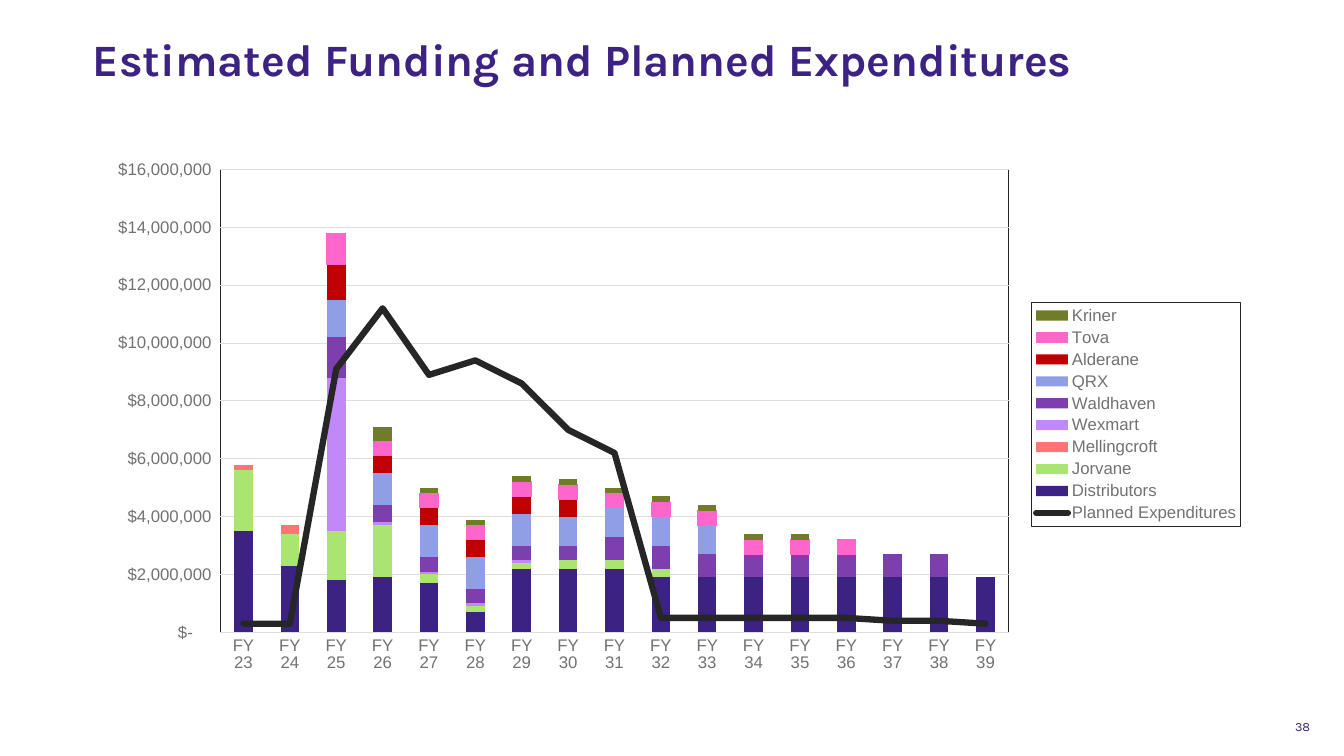
import pptx
import pptx.chart.data
import pptx.dml.color
import pptx.enum.chart
import pptx.enum.text
import pptx.oxml
import pptx.oxml.ns
import pptx.util
from pptx.util import Inches

PURPLE = pptx.dml.color.RGBColor(0x3C, 0x22, 0x83)
INK = pptx.dml.color.RGBColor(0x26, 0x26, 0x26)
LABEL_GRAY = pptx.dml.color.RGBColor(0x72, 0x72, 0x72)
GRID_GRAY = pptx.dml.color.RGBColor(0xDE, 0xDE, 0xDE)
PINK = pptx.dml.color.RGBColor(0xFF, 0x66, 0xCC)
NAMESPACES = pptx.oxml.ns.nsdecls("c", "a")
YEARS = range(23, 40)

# Payer, colour, first fiscal year, funding in units of $100,000
FUNDING = [
    ("Distributors", PURPLE, 23,
     [35, 23, 18, 19, 17, 7, 22, 22, 22, 19, 19, 19, 19, 19, 19, 19, 19]),
    ("Jorvane", pptx.dml.color.RGBColor(0xAA, 0xE5, 0x71), 23,
     [21, 11, 17, 18, 3, 2, 2, 3, 3, 3]),
    ("Mellingcroft", pptx.dml.color.RGBColor(0xFF, 0x74, 0x74), 23, [2, 3]),
    ("Wexmart", pptx.dml.color.RGBColor(0xC1, 0x89, 0xF7), 25, [53, 1, 1, 1, 1]),
    ("Waldhaven", pptx.dml.color.RGBColor(0x7D, 0x3F, 0xAE), 25,
     [14, 6, 5, 5, 5, 5, 8, 8, 8, 8, 8, 8, 8, 8]),
    ("QRX", pptx.dml.color.RGBColor(0x90, 0x9E, 0xE6), 25,
     [13, 11, 11, 11, 11, 10, 10, 10, 10]),
    ("Alderane", pptx.dml.color.RGBColor(0xC0, 0x00, 0x00), 25, [12, 6, 6, 6, 6, 6]),
    ("Tova", PINK, 25, [11] + [5] * 11),
    ("Kriner", pptx.dml.color.RGBColor(0x71, 0x7C, 0x27), 26, [5] + [2] * 9),
    ("Planned Expenditures", INK, 23,
     [3, 3, 91, 112, 89, 94, 86, 70, 62, 5, 5, 5, 5, 5, 4, 4, 3]),
]


def style_font(font, name, size, color):
    font.name = name
    font.size = pptx.util.Pt(size)
    font.color.rgb = color


def set_layout(element, position, target, x, y, width, height):
    """Place a chart part by fractions of the chart area."""
    for old in element.findall(pptx.oxml.ns.qn("c:layout")):
        element.remove(old)
    element.insert(position, pptx.oxml.parse_xml(
        f'<c:layout {NAMESPACES}><c:manualLayout>{target}'
        '<c:xMode val="edge"/><c:yMode val="edge"/>'
        f'<c:x val="{x}"/><c:y val="{y}"/><c:w val="{width}"/><c:h val="{height}"/>'
        '</c:manualLayout></c:layout>'))


deck = pptx.Presentation()
deck.slide_width, deck.slide_height = Inches(13.33), Inches(7.5)
slide = deck.slides.add_slide(deck.slide_layouts[5])

# Title
title = slide.shapes.title
title.left, title.top = Inches(0.92), Inches(0.37)
title.width, title.height = Inches(12.13), Inches(0.87)
frame = title.text_frame
frame.margin_left = frame.margin_right = frame.margin_top = 0
frame.vertical_anchor = pptx.enum.text.MSO_ANCHOR.TOP
para = frame.paragraphs[0]
para.alignment = pptx.enum.text.PP_ALIGN.LEFT
para.line_spacing = 0.9
span = para.add_run()
span.text = "Estimated Funding and Planned Expenditures"
style_font(span.font, "Karla", 32, PURPLE)
span.font.bold = True

# Chart data
data = pptx.chart.data.CategoryChartData()
data.categories = [f"FY {year}" for year in YEARS]
for name, color, first_year, amounts in FUNDING:
    before = [None] * (first_year - YEARS[0])
    values = before + [amount * 100000 for amount in amounts]
    data.add_series(name, values + [None] * (len(YEARS) - len(values)))
chart = slide.shapes.add_chart(
    pptx.enum.chart.XL_CHART_TYPE.COLUMN_STACKED,
    Inches(0.92), Inches(1.47), Inches(11.5), Inches(5.28), data).chart
chart.has_title = False
style_font(chart.font, "Arial", 10, INK)

# Columns
plot = chart.plots[0]
plot.vary_by_categories = False
plot.gap_width, plot.overlap = 150, 100
all_series = list(plot.series)
for series, (name, color, first_year, amounts) in zip(all_series[:-1], FUNDING):
    series.format.fill.solid()
    series.format.fill.fore_color.rgb = color
    if color == PINK:
        series.format.line.color.rgb = color
        series.format.line.width = pptx.util.Pt(0.75)

# Axes
category_axis, value_axis = chart.category_axis, chart.value_axis
for axis in (category_axis, value_axis):
    style_font(axis.tick_labels.font, "Arial", 12, LABEL_GRAY)
    axis.major_tick_mark = axis.minor_tick_mark = pptx.enum.chart.XL_TICK_MARK.NONE
value_axis.format.line.fill.background()
value_axis.minimum_scale, value_axis.maximum_scale = 0, 16000000
value_axis.major_unit = 2000000
value_axis.tick_labels.number_format = (
    '_("$"* #,##0_);_("$"* \\(#,##0\\);_("$"* "-"??_);_(@_)')
value_axis.tick_labels.number_format_is_linked = False
for line in (category_axis.format.line, value_axis.major_gridlines.format.line):
    line.color.rgb = GRID_GRAY
    line.width = pptx.util.Pt(0.75)

# Planned expenditures become a line on the same axes
planned = all_series[-1]
planned.format.line.color.rgb = INK
planned.format.line.width = pptx.util.Pt(4.5)
planned_xml = planned.format.line._get_or_add_ln().getparent().getparent()
planned_xml.find(".//" + pptx.oxml.ns.qn("a:ln")).set("cap", "rnd")
for invert in planned_xml.findall(pptx.oxml.ns.qn("c:invertIfNegative")):
    planned_xml.remove(invert)
planned_xml.find(pptx.oxml.ns.qn("c:spPr")).addnext(pptx.oxml.parse_xml(
    f'<c:marker {NAMESPACES}><c:symbol val="none"/></c:marker>'))
planned_xml.append(pptx.oxml.parse_xml(f'<c:smooth {NAMESPACES} val="0"/>'))
bar_chart = planned_xml.getparent()
line_chart = pptx.oxml.parse_xml(
    f'<c:lineChart {NAMESPACES}><c:grouping val="standard"/><c:varyColors val="0"/>'
    '<c:marker val="1"/></c:lineChart>')
line_chart.insert(2, planned_xml)
for axis_id in bar_chart.findall(pptx.oxml.ns.qn("c:axId")):
    line_chart.append(pptx.oxml.parse_xml(
        f'<c:axId {NAMESPACES} val="{axis_id.get("val")}"/>'))
bar_chart.addnext(line_chart)

# Legend and plot area, each with a thin border
chart.has_legend = True
legend = chart.legend
legend.position = pptx.enum.chart.XL_LEGEND_POSITION.RIGHT
legend.include_in_layout = False
style_font(legend.font, "Arial", 12, LABEL_GRAY)
plot_area = bar_chart.getparent()
legend_xml = plot_area.getparent().find(pptx.oxml.ns.qn("c:legend"))
set_layout(plot_area, 0, '<c:layoutTarget val="inner"/>', 0.11, 0.04, 0.68, 0.87)
set_layout(legend_xml, 1, "", 0.81, 0.29, 0.18, 0.42)
border = (f'<c:spPr {NAMESPACES}><a:noFill/><a:ln w="9525"><a:solidFill>'
          f'<a:srgbClr val="{INK}"/></a:solidFill></a:ln></c:spPr>')
plot_area.append(pptx.oxml.parse_xml(border))
legend_xml.find(pptx.oxml.ns.qn("c:txPr")).addprevious(pptx.oxml.parse_xml(border))

# Page number
box = slide.shapes.add_textbox(Inches(12.7), Inches(7.13), Inches(0.44), Inches(0.37))
frame = box.text_frame
frame.word_wrap = True
frame.margin_left = frame.margin_right = frame.margin_top = frame.margin_bottom = 0
para = frame.paragraphs[0]
para.alignment = pptx.enum.text.PP_ALIGN.CENTER
span = para.add_run()
span.text = "38"
style_font(span.font, "Karla", 9, PURPLE)

deck.save("out.pptx")
